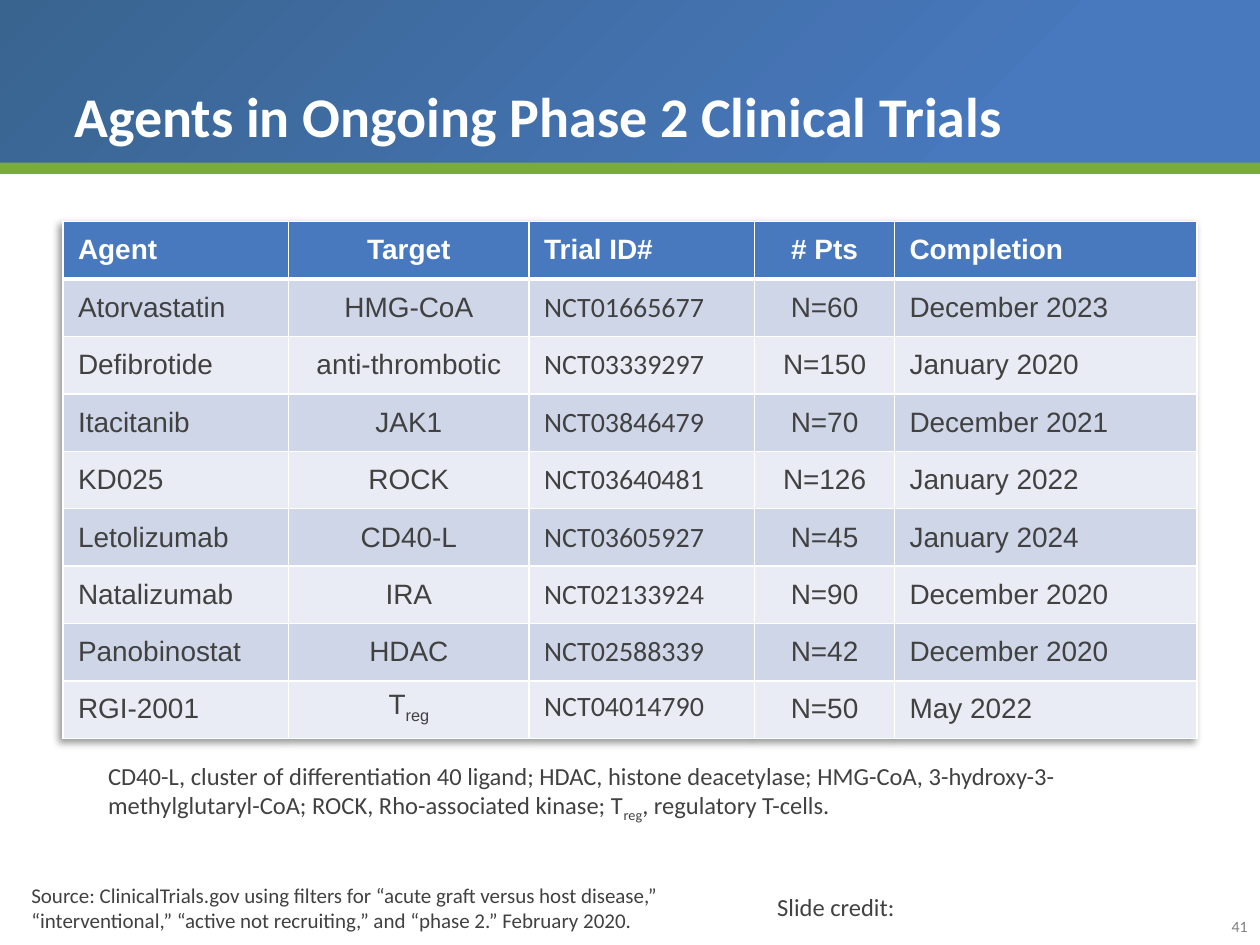
from dataclasses import dataclass

from pptx import Presentation
from pptx.dml.color import RGBColor
from pptx.enum.shapes import MSO_SHAPE as Shape
from pptx.enum.text import MSO_ANCHOR as Anchor, MSO_AUTO_SIZE as AutoSize, PP_ALIGN as Align
from pptx.oxml import parse_xml
from pptx.oxml.ns import nsdecls
from pptx.util import Inches, Pt


@dataclass(frozen=True)
class Theme:
    blue: str = "4878BD"
    deep_blue: str = "396490"
    green: str = "79AD38"
    white: str = "FFFFFF"
    ink: str = "414141"
    grey: str = "7F7F7F"
    bands: tuple = ("CFD6E8", "E9ECF4")
    text_font: str = "Calibri"
    table_font: str = "Arial"
    title_size: int = 32
    table_size: int = 16
    note_size: int = 14
    source_size: int = 12
    number_size: int = 9


THEME = Theme()
HEADINGS = ("Agent", "Target", "Trial ID#", "# Pts", "Completion")
TRIALS = (
    ("Atorvastatin", "HMG-CoA", "NCT01665677", "N=60", "December 2023"),
    ("Defibrotide", "anti-thrombotic", "NCT03339297", "N=150", "January 2020"),
    ("Itacitanib", "JAK1", "NCT03846479", "N=70", "December 2021"),
    ("KD025", "ROCK", "NCT03640481", "N=126", "January 2022"),
    ("Letolizumab", "CD40-L", "NCT03605927", "N=45", "January 2024"),
    ("Natalizumab", "IRA", "NCT02133924", "N=90", "December 2020"),
    ("Panobinostat", "HDAC", "NCT02588339", "N=42", "December 2020"),
    ("RGI-2001", "T|reg|", "NCT04014790", "N=50", "May 2022"),
)
COLUMN_WIDTHS = (1.79, 1.91, 1.79, 1.11, 2.4)
CENTRED_COLUMNS = (1, 3)
TRIAL_ID_COLUMN = 2


def write_text(frame, text, size=THEME.note_size, color=THEME.ink, font=THEME.text_font,
               bold=False, align=Align.LEFT, spacing=None, after=0):
    """Text between bars is set as subscript."""
    paragraph = frame.paragraphs[0]
    paragraph.alignment = align
    paragraph.space_after = Pt(after)
    if spacing:
        paragraph.line_spacing = spacing
    for index, piece in enumerate(text.split("|")):
        if not piece:
            continue
        run = paragraph.add_run()
        run.text = piece
        run.font.size = Pt(size)
        run.font.name = font
        run.font.bold = bold
        run.font.color.rgb = RGBColor.from_string(color)
        if index % 2:
            run._r.get_or_add_rPr().set("baseline", "-25000")


class SlideBuilder:
    def __init__(self, presentation, theme):
        self.theme = theme
        self.slide = presentation.slides.add_slide(presentation.slide_layouts[6])

    def bar(self, top, height, color):
        shape = self.slide.shapes.add_shape(
            Shape.RECTANGLE, Inches(0), Inches(top), Inches(10), Inches(height))
        shape.shadow.inherit = False
        shape.fill.solid()
        shape.fill.fore_color.rgb = RGBColor.from_string(color)
        shape.line.fill.background()
        return shape

    def gradient_bar(self, top, height, start, end):
        properties = self.bar(top, height, end)._element.spPr
        solid = properties.find("{*}solidFill")
        properties.replace(solid, parse_xml(
            f'<a:gradFill {nsdecls("a")} rotWithShape="1"><a:gsLst>'
            f'<a:gs pos="0"><a:srgbClr val="{start}"/></a:gs>'
            f'<a:gs pos="79000"><a:srgbClr val="{end}"/></a:gs></a:gsLst>'
            '<a:path path="circle"><a:fillToRect r="100000" b="100000"/></a:path>'
            '</a:gradFill>'))

    def text(self, left, top, width, height, text, anchor=Anchor.TOP, wrap=True, **style):
        box = self.slide.shapes.add_textbox(
            Inches(left), Inches(top), Inches(width), Inches(height))
        frame = box.text_frame
        frame.word_wrap = wrap
        frame.auto_size = AutoSize.NONE
        frame.vertical_anchor = anchor
        write_text(frame, text, **style)

    def cell(self, cell, text, fill, borders, **style):
        cell.margin_left = cell.margin_right = Inches(0.12)
        cell.margin_top = cell.margin_bottom = Inches(0.05)
        cell.vertical_anchor = Anchor.MIDDLE
        properties = cell._tc.get_or_add_tcPr()
        for side, points in borders.items():
            properties.append(parse_xml(
                f'<a:ln{side} {nsdecls("a")} w="{Pt(points)}"><a:solidFill>'
                f'<a:srgbClr val="{self.theme.white}"/></a:solidFill></a:ln{side}>'))
        cell.fill.solid()
        cell.fill.fore_color.rgb = RGBColor.from_string(fill)
        write_text(cell.text_frame, text, size=self.theme.table_size, **style)

    def table(self, left, top, widths, height, rows):
        theme = self.theme
        table = self.slide.shapes.add_table(
            len(rows), len(widths), Inches(left), Inches(top),
            Inches(sum(widths)), Inches(height)).table
        table._tbl.tblPr.insert(0, parse_xml(
            f'<a:effectLst {nsdecls("a")}><a:outerShdw blurRad="50800" dist="38100" '
            'dir="8100000" algn="tr" rotWithShape="0"><a:prstClr val="black">'
            '<a:alpha val="40000"/></a:prstClr></a:outerShdw></a:effectLst>'))
        for column, width in zip(table.columns, widths):
            column.width = Inches(width)
        for row_index, values in enumerate(rows):
            table.rows[row_index].height = Inches(height / len(rows))
            header = row_index == 0
            borders = {"L": 1, "R": 1, "T": 3 if row_index == 1 else 1, "B": 3 if header else 1}
            fixed_spacing = header or row_index == len(rows) - 1
            for column_index, value in enumerate(values):
                is_trial_id = column_index == TRIAL_ID_COLUMN and not header
                self.cell(
                    table.cell(row_index, column_index), value,
                    theme.blue if header else theme.bands[(row_index - 1) % 2], borders,
                    color=theme.white if header else theme.ink,
                    font=theme.text_font if is_trial_id else theme.table_font,
                    bold=header,
                    align=Align.CENTER if column_index in CENTRED_COLUMNS else Align.LEFT,
                    spacing=Pt(17) if fixed_spacing else None)


def main():
    presentation = Presentation()
    presentation.slide_width = Inches(10)
    presentation.slide_height = Inches(7.5)
    builder = SlideBuilder(presentation, THEME)

    builder.gradient_bar(0, 1.37, THEME.deep_blue, THEME.blue)
    builder.bar(1.29, 0.09, THEME.green)
    builder.text(0.49, 0.12, 9.01, 1.12, "Agents in Ongoing Phase 2 Clinical Trials",
                 anchor=Anchor.BOTTOM, size=THEME.title_size, color=THEME.white,
                 bold=True, spacing=0.9)
    builder.table(0.5, 1.76, COLUMN_WIDTHS, 4.1, (HEADINGS, *TRIALS))
    builder.text(0.76, 5.99, 8.04, 0.57,
                 "CD40-L, cluster of differentiation 40 ligand; HDAC, histone deacetylase; "
                 "HMG-CoA, 3-hydroxy-3-methylglutaryl-CoA; ROCK, Rho-associated kinase; "
                 "T|reg|, regulatory T-cells.")
    builder.text(0.15, 6.63, 5.92, 0.82,
                 "Source: ClinicalTrials.gov using filters for “acute graft versus host "
                 "disease,” “interventional,” “active not recruiting,” and “phase 2.” "
                 "February 2020.",
                 anchor=Anchor.BOTTOM, size=THEME.source_size, after=12)
    builder.text(6.07, 7.03, 1.14, 0.34, "Slide credit:", wrap=False)
    builder.text(9.58, 7.23, 0.42, 0.25, "41", size=THEME.number_size,
                 color=THEME.grey, align=Align.RIGHT)

    presentation.save("out.pptx")


if __name__ == "__main__":
    main()
